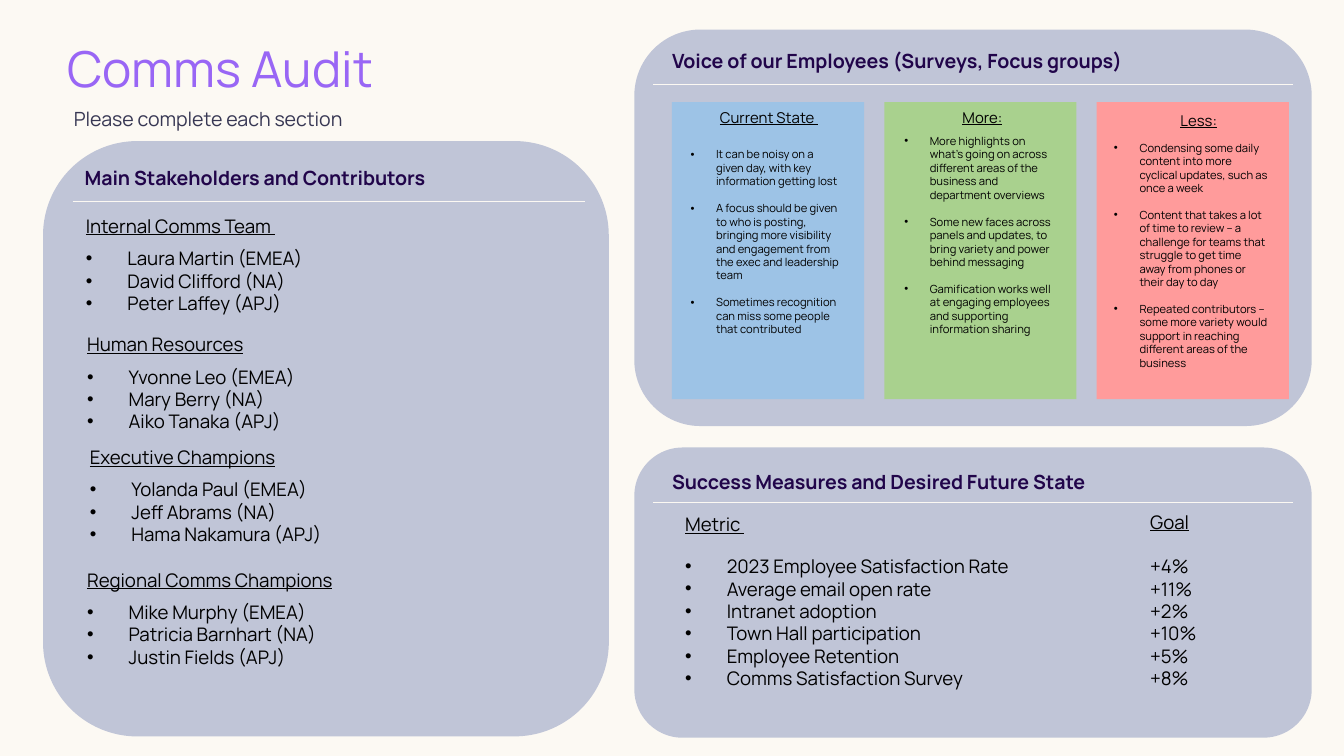
from lxml import etree
from pptx import Presentation
from pptx.dml.color import RGBColor
from pptx.enum.shapes import MSO_CONNECTOR, MSO_SHAPE
from pptx.enum.text import MSO_AUTO_SIZE, PP_ALIGN
from pptx.oxml.ns import qn
from pptx.util import Pt

ROUNDED, RECTANGLE = MSO_SHAPE.ROUNDED_RECTANGLE, MSO_SHAPE.RECTANGLE
STRAIGHT = MSO_CONNECTOR.STRAIGHT
GROW = MSO_AUTO_SIZE.SHAPE_TO_FIT_TEXT
CENTER = PP_ALIGN.CENTER
PX = 9144
FONT = "Manrope"
COLORS = {
    "cream": "FCF9F3", "panel": "C0C5D7", "violet": "9966F5", "slate": "373753",
    "plum": "21054A", "black": "000000", "blue": "9DC3E6", "green": "A9D18E", "red": "FF9B9B",
}

HEADINGS = [
    ("Comms Audit", (50, 21, 362, 52), {"size": 26.5, "color": "violet"}),
    ("Please complete each section", (55, 76, 362, 21), {"size": 10.5, "color": "slate"}),
]
PANELS = [
    ("Main Stakeholders and Contributors", (32, 105, 421, 443), (63, 120, 305), (54, 435, 150)),
    ("Voice of our Employees (Surveys, Focus groups)", (472, 22, 504, 295),
     (500, 33, 381), (486, 962, 63)),
    ("Success Measures and Desired Future State", (472, 333, 504, 216),
     (500, 346, 381), (486, 962, 374)),
]
TEAMS = [
    ("Internal Comms Team ", (54, 155),
     ["Laura Martin (EMEA)", "David Clifford (NA)", "Peter Laffey (APJ)"]),
    ("Human Resources", (55, 243),
     ["Yvonne Leo (EMEA)", "Mary Berry (NA)", "Aiko Tanaka (APJ)"]),
    ("Executive Champions", (57, 327),
     ["Yolanda Paul (EMEA)", "Jeff Abrams (NA)", "Hama Nakamura (APJ)"]),
    ("Regional Comms Champions", (55, 418),
     ["Mike Murphy (EMEA)", "Patricia Barnhart (NA)", "Justin Fields (APJ)"]),
]
CARDS = [
    ("Current State ", "blue", (513, 76), (504, 105, 133, 182), [
        "It can be noisy on a given day, with key information getting lost",
        "A focus should be given to who is posting, bringing more visibility and engagement "
        "from the exec and leadership team",
        "Sometimes recognition can miss some people that contributed"]),
    ("More:", "green", (672, 76), (663, 95, 135, 192), [
        "More highlights on what’s going on across different areas of the business and "
        "department overviews",
        "Some new faces across panels and updates, to bring variety and power behind messaging",
        "Gamification works well at engaging employees and supporting information sharing"]),
    ("Less:", "red", (833, 78), (819, 100, 135, 212), [
        "Condensing some daily content into more cyclical updates, such as once a week",
        "Content that takes a lot of time to review – a challenge for teams that struggle to "
        "get time away from phones or their day to day",
        "Repeated contributors – some more variety would support in reaching different areas "
        "of the business"]),
]
METRICS = [
    ("2023 Employee Satisfaction Rate", "+4%"),
    ("Average email open rate", "+11%"),
    ("Intranet adoption", "+2%"),
    ("Town Hall participation", "+10%"),
    ("Employee Retention", "+5%"),
    ("Comms Satisfaction Survey", "+8%"),
]
CARD_LEFT, CARD_TOP, CARD_WIDTH, CARD_HEIGHT, CARD_STEP = 500, 76, 143, 221, 158
LIST_OFFSET = 24
TITLE_FRAME = {"margin_left": 0, "margin_right": 0, "margin_top": PX, "margin_bottom": 0}


def rgb(name):
    return RGBColor.from_string(COLORS[name])


def scaled(*lengths):
    return [length * PX for length in lengths]


def add_block(page, kind, place, color):
    block = page.shapes.add_shape(kind, *scaled(*place))
    block.shadow.inherit = False
    block.fill.solid()
    block.fill.fore_color.rgb = rgb(color)
    block.line.fill.background()


def add_rule(page, left, right, top):
    rule = page.shapes.add_connector(STRAIGHT, *scaled(left, top, right, top))
    rule.line.color.rgb = rgb("cream")
    rule.line.width = Pt(0.75)
    etree.SubElement(rule._element.spPr, qn("a:effectLst"))


def add_bullet(para, indent):
    props = para._p.get_or_add_pPr()
    props.set("marL", str(indent * PX))
    props.set("indent", str(-indent * PX))
    color = etree.SubElement(props, qn("a:buClr"))
    etree.SubElement(color, qn("a:srgbClr"), val=COLORS["black"])
    etree.SubElement(props, qn("a:buFont"), typeface="Arial")
    etree.SubElement(props, qn("a:buChar"), char="•")


def add_text(page, lines, place, size=10, color="black", indent=0, gap=0,
             frame=None, layout=None, **style):
    box = page.shapes.add_textbox(*scaled(*place))
    text = box.text_frame
    for key, value in {"word_wrap": True, "auto_size": GROW, **(frame or {})}.items():
        setattr(text, key, value)
    for index, line in enumerate(lines):
        para = text.paragraphs[0] if index == 0 else text.add_paragraph()
        if indent:
            add_bullet(para, indent)
        if gap and index:
            para.space_before = Pt(gap)
        for key, value in (layout or {}).items():
            setattr(para, key, value)
        span = para.add_run()
        span.text = line
        for key, value in {"name": FONT, "size": Pt(size), **style}.items():
            setattr(span.font, key, value)
        span.font.color.rgb = rgb(color)


def add_title(page, title, place, **style):
    add_text(page, [title], place, frame=TITLE_FRAME, layout={"line_spacing": 1.15}, **style)


def main():
    deck = Presentation()
    deck.slide_width = 1000 * PX
    deck.slide_height = deck.slide_width * 9 // 16
    page = deck.slides.add_slide(deck.slide_layouts[6])
    page.background.fill.solid()
    page.background.fill.fore_color.rgb = rgb("cream")

    for title, place, style in HEADINGS:
        add_title(page, title, place, **style)

    for title, place, (left, top, width), rule in PANELS:
        add_block(page, ROUNDED, place, "panel")
        add_title(page, title, (left, top, width, 21), size=10.5, color="plum", bold=True)
        add_rule(page, *rule)

    for team, (left, top), people in TEAMS:
        add_text(page, [team], (left, top, 244, 27), underline=True)
        add_text(page, people, (left, top + LIST_OFFSET, 286, 77), indent=31)

    for index, (title, color, (left, top), place, points) in enumerate(CARDS):
        card_left = CARD_LEFT + index * CARD_STEP
        add_block(page, RECTANGLE, (card_left, CARD_TOP, CARD_WIDTH, CARD_HEIGHT), color)
        add_text(page, [title], (left, top, 118, 24), size=8, underline=True,
                 layout={"alignment": CENTER})
        add_text(page, points, place, size=6, indent=19, gap=7.2)

    metrics, goals = zip(*METRICS)
    add_text(page, ["Metric "], (500, 377, 172, 27), underline=True)
    add_text(page, metrics, (500, 408, 286, 111), indent=31)
    add_text(page, ["Goal"], (846, 375, 124, 27), underline=True)
    add_text(page, goals, (846, 408, 62, 111))

    deck.save("out.pptx")


if __name__ == "__main__":
    main()
